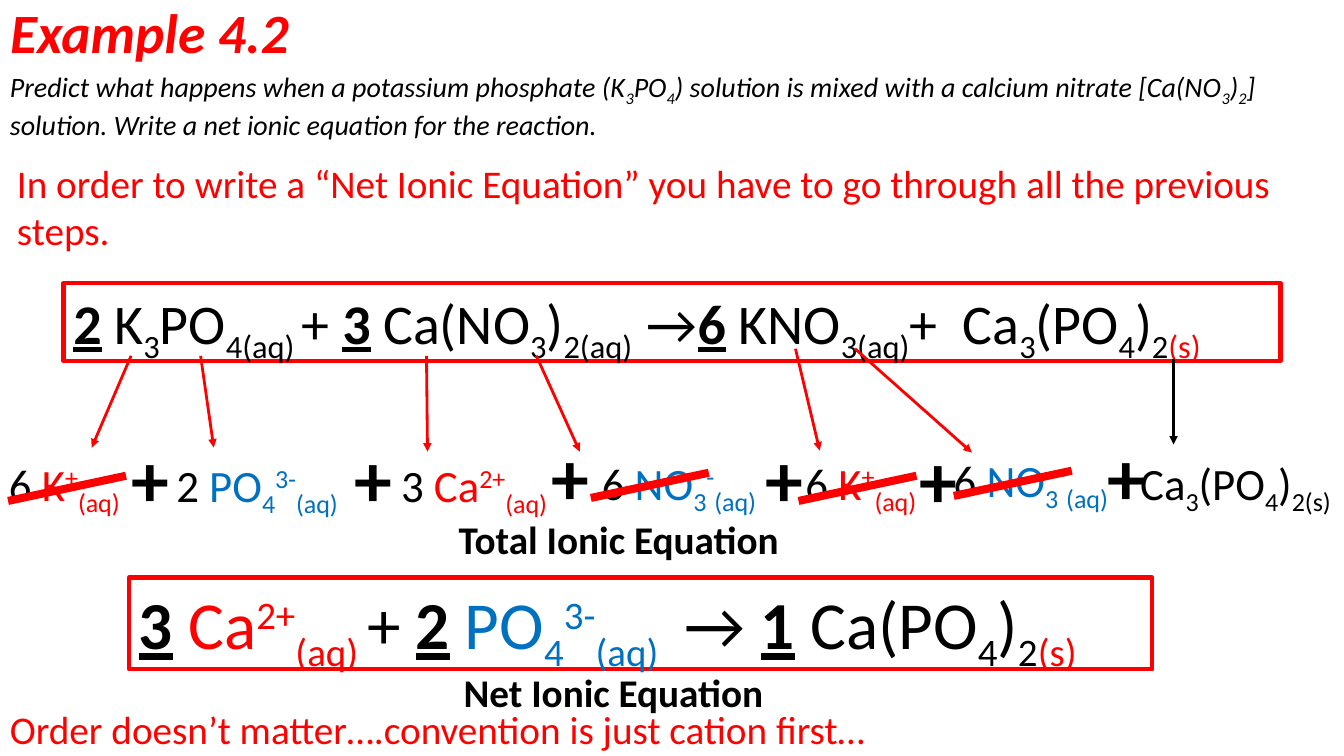
from dataclasses import dataclass

from lxml.etree import SubElement
from pptx import Presentation
from pptx.dml.color import RGBColor
from pptx.enum.shapes import MSO_CONNECTOR, MSO_SHAPE
from pptx.enum.text import MSO_ANCHOR, MSO_AUTO_SIZE, PP_ALIGN
from pptx.oxml.ns import qn
from pptx.shapes.autoshape import Shape
from pptx.slide import Slide
from pptx.util import Inches, Pt

RED = RGBColor(0xFF, 0x00, 0x00)
BLUE = RGBColor(0x00, 0x70, 0xC0)
BLACK = RGBColor(0x00, 0x00, 0x00)
FONT = "Calibri"
SUBSCRIPT, SUPERSCRIPT = -25000, 30000


@dataclass(frozen=True)
class Piece:
    text: str
    color: RGBColor = BLACK
    baseline: int = 0
    coefficient: bool = False


@dataclass(frozen=True)
class TextItem:
    left: float
    top: float
    width: float
    height: float
    size: float
    pieces: list[Piece]
    bold: bool = False
    italic: bool = False
    framed: bool = False


@dataclass(frozen=True)
class Stroke:
    start: tuple[float, float]
    end: tuple[float, float]
    color: RGBColor = RED
    width: float = 2
    arrow: bool = True


def sub(text: str, color: RGBColor = BLACK) -> Piece:
    return Piece(text, color, SUBSCRIPT)


def sup(text: str, color: RGBColor) -> Piece:
    return Piece(text, color, SUPERSCRIPT)


def count(text: str) -> Piece:
    return Piece(text, coefficient=True)


def calcium_phosphate() -> list[Piece]:
    return [Piece("Ca"), sub("3"), Piece("(PO"), sub("4"), Piece(")")]


def potassium() -> list[Piece]:
    return [Piece("6"), Piece(" K", RED), sup("+", RED), sub("(aq)", RED)]


def nitrate() -> list[Piece]:
    return [Piece("6 "), Piece("NO", BLUE), sub("3", BLUE), sup("-", BLUE), sub("(aq)", BLUE)]


def phosphate(state: str) -> list[Piece]:
    return [Piece("PO", BLUE), sub("4", BLUE), sup("3-", BLUE), sub(state, BLUE)]


def calcium(lead: str, state: str) -> list[Piece]:
    return [Piece(lead, RED), sup("2+", RED), sub(state, RED)]


QUESTION = [
    Piece("Predict what happens when a potassium phosphate (K"), sub("3"), Piece("PO"), sub("4"),
    Piece(") solution is mixed with a calcium nitrate [Ca(NO"), sub("3"), Piece(")"), sub("2"),
    Piece("] solution. Write a net ionic equation for the reaction."),
]
ADVICE = [Piece("In order to write a “Net Ionic Equation” you have to go through "
                "all the previous steps.", RED)]
CONVENTION = [Piece("Order doesn’t matter….convention is just cation first…", RED)]
MOLECULAR_EQUATION = [
    count("2"), Piece(" K"), sub("3"), Piece("PO"), sub("4(aq) "), Piece("+ "),
    count("3"), Piece(" Ca(NO"), sub("3"), Piece(")"), sub("2(aq)  "), Piece("→"),
    count("6"), Piece(" KNO"), sub("3(aq)"), Piece("+  "),
    *calcium_phosphate(), sub("2"), sub("(s)", RED),
]
NET_EQUATION = [
    count("3"), Piece(" "), *calcium("Ca", "(aq) "), Piece("+ "),
    count("2"), Piece(" "), *phosphate("(aq)   "), Piece("→ "),
    count("1"), Piece(" Ca(PO"), sub("4"), Piece(")"), sub("2"), sub("(s)", RED),
]
IONS = [
    (-0.01, 4.48, 1.4, potassium()),
    (1.65, 4.49, 2.02, [Piece("2 "), *phosphate("(aq)")]),
    (3.88, 4.49, 1.84, [Piece("3"), *calcium(" Ca", "(aq)")]),
    (5.87, 4.47, 2.02, nitrate()),
    (7.89, 4.47, 1.44, potassium()),
    (9.36, 4.44, 1.85, nitrate()),
    (11.21, 4.47, 2.36, [*calcium_phosphate(), sub("2(s)")]),
]
PLUS_SIGNS = [(1.21, 4.24), (3.42, 4.24), (5.37, 4.22), (7.49, 4.24), (9.02, 4.25), (10.89, 4.22)]
TEXT_ITEMS = [
    TextItem(0, 0.64, 13.33, 0.77, 20, QUESTION, italic=True),
    TextItem(0.63, 2.81, 12.07, 0.77, 40, MOLECULAR_EQUATION, framed=True),
    TextItem(0.07, 1.53, 13, 1.04, 28, ADVICE),
    *[TextItem(left, top, width, 0.64, 32, pieces) for left, top, width, pieces in IONS],
    *[TextItem(left, top, 0.62, 1.01, 54, [Piece("+")], bold=True) for left, top in PLUS_SIGNS],
    TextItem(4.45, 5.06, 3.72, 0.57, 28, [Piece("Total Ionic Equation")], bold=True),
    TextItem(1.28, 5.73, 10.15, 0.91, 48, NET_EQUATION, framed=True),
    TextItem(4.5, 6.58, 3.72, 0.57, 28, [Piece("Net Ionic Equation")], bold=True),
    TextItem(0, 6.95, 9.63, 0.57, 28, CONVENTION),
]
CANCELLED_IONS = [(0.08, 4.97), (5.86, 4.94), (7.92, 4.97), (9.46, 4.92)]
STROKES = [
    Stroke((1.3, 3.53), (0.91, 4.44)),
    Stroke((1.99, 3.53), (2.12, 4.44)),
    Stroke((4.23, 3.53), (4.24, 4.48)),
    Stroke((5.32, 3.53), (5.75, 4.48)),
    Stroke((7.89, 3.46), (8.13, 4.47)),
    Stroke((8.48, 3.46), (9.64, 4.49)),
    Stroke((11.64, 3.56), (11.64, 4.41), BLACK),
    *[Stroke((left, low), (left + 1.17, low - 0.25), width=5.75, arrow=False)
      for left, low in CANCELLED_IONS],
]


def add_title(slide: Slide) -> None:
    title = slide.shapes.title
    title.left, title.top = Inches(0), Inches(0)
    title.width, title.height = Inches(11.5), Inches(0.71)
    title.text_frame.text = "Example 4.2"
    title.text_frame.auto_size = MSO_AUTO_SIZE.NONE
    title.text_frame.vertical_anchor = MSO_ANCHOR.MIDDLE
    paragraph = title.text_frame.paragraphs[0]
    paragraph.alignment = PP_ALIGN.LEFT
    paragraph.line_spacing = 0.9
    font = paragraph.font
    font.name, font.size = FONT, Pt(39.6)
    font.bold = font.italic = True
    font.color.rgb = RED


def add_frame(slide: Slide, box: list[int]) -> Shape:
    shape = slide.shapes.add_shape(MSO_SHAPE.RECTANGLE, *box)
    shape.shadow.inherit = False
    shape.fill.background()
    shape.line.color.rgb = RED
    shape.line.width = Pt(3)
    return shape


def add_text(slide: Slide, item: TextItem) -> None:
    box = [Inches(value) for value in (item.left, item.top, item.width, item.height)]
    shape = add_frame(slide, box) if item.framed else slide.shapes.add_textbox(*box)
    frame = shape.text_frame
    frame.word_wrap = True
    frame.vertical_anchor = MSO_ANCHOR.TOP
    paragraph = frame.paragraphs[0]
    paragraph.alignment = PP_ALIGN.LEFT
    font = paragraph.font
    font.name, font.size = FONT, Pt(item.size)
    font.bold, font.italic = item.bold, item.italic
    for piece in item.pieces:
        run = paragraph.add_run()
        run.text = piece.text
        run.font.color.rgb = piece.color
        if piece.coefficient:
            run.font.bold = run.font.underline = True
        if piece.baseline:
            run.font._element.set("baseline", str(piece.baseline))


def add_stroke(slide: Slide, stroke: Stroke) -> None:
    ends = [Inches(value) for value in stroke.start + stroke.end]
    connector = slide.shapes.add_connector(MSO_CONNECTOR.STRAIGHT, *ends)
    connector.line.color.rgb = stroke.color
    connector.line.width = Pt(stroke.width)
    if stroke.arrow:
        SubElement(connector.line._get_or_add_ln(), qn("a:tailEnd"), type="triangle")
    SubElement(connector._element.spPr, qn("a:effectLst"))


def main() -> None:
    presentation = Presentation()
    presentation.slide_width, presentation.slide_height = Inches(13.33), Inches(7.5)
    slide = presentation.slides.add_slide(presentation.slide_layouts[5])
    add_title(slide)
    for item in TEXT_ITEMS:
        add_text(slide, item)
    for stroke in STROKES:
        add_stroke(slide, stroke)
    presentation.save("out.pptx")


if __name__ == "__main__":
    main()
